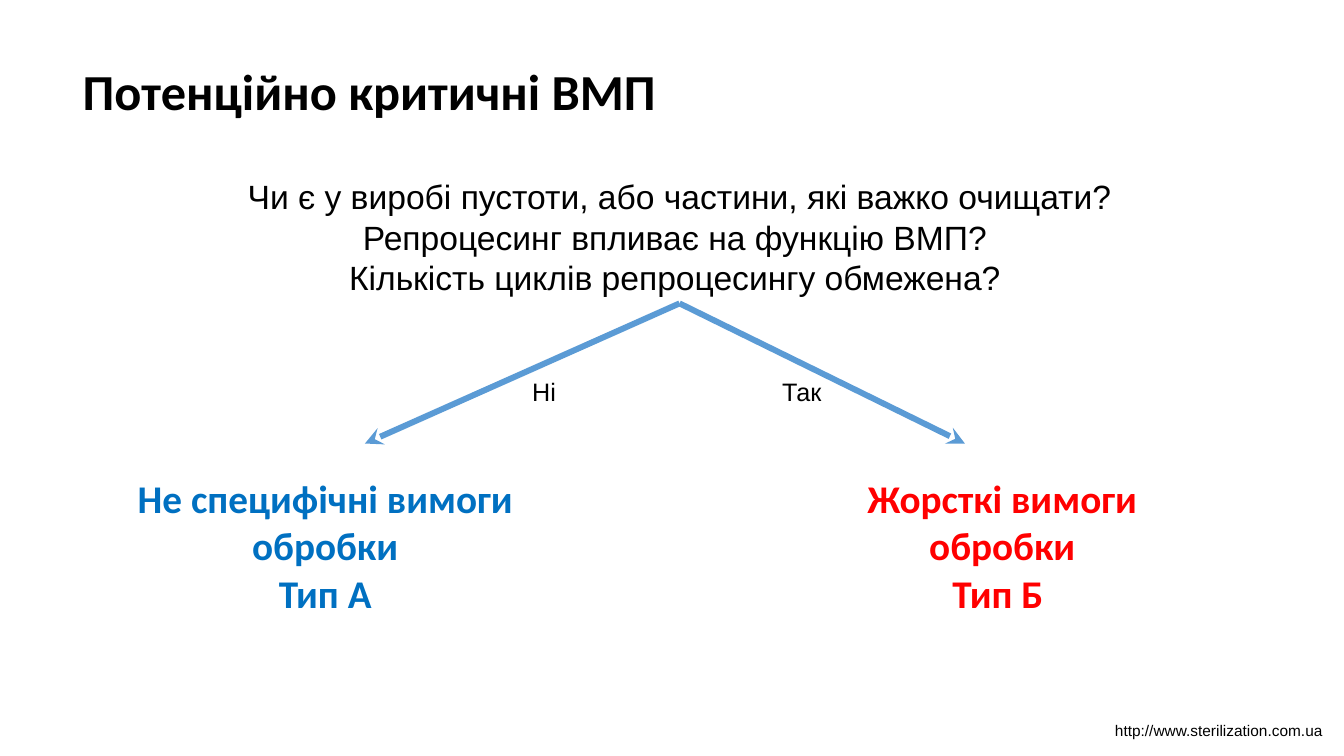
"""Builds the decision slide on potentially critical medical devices."""
from lxml.etree import SubElement
from pptx import Presentation
from pptx.dml.color import RGBColor
from pptx.enum.shapes import MSO_CONNECTOR
from pptx.enum.text import MSO_ANCHOR, PP_ALIGN
from pptx.oxml.ns import qn
from pptx.util import Inches, Pt

BLACK = RGBColor(0x00, 0x00, 0x00)
ARROW_BLUE = RGBColor(0x5B, 0x9B, 0xD5)
TYPE_A_BLUE = RGBColor(0x00, 0x70, 0xC1)
TYPE_B_RED = RGBColor(0xFF, 0x00, 0x00)


def write(frame, text, font_name, size, color, bold, align):
    frame.text = text
    for paragraph in frame.paragraphs:
        paragraph.alignment = align
        for run in paragraph.runs:
            run.font.name = font_name
            run.font.size = Pt(size)
            run.font.bold = bold
            run.font.color.rgb = color


presentation = Presentation()
presentation.slide_width = Inches(13.33)
presentation.slide_height = Inches(7.5)
slide = presentation.slides.add_slide(presentation.slide_layouts[5])

title = slide.shapes.title
title.left, title.top = Inches(0.72), Inches(0.18)
title.width, title.height = Inches(10.11), Inches(1.43)
write(title.text_frame, "Потенційно критичні ВМП", "Calibri", 36, BLACK, True, PP_ALIGN.LEFT)
title.text_frame.vertical_anchor = MSO_ANCHOR.MIDDLE

questions = (
    "Чи є у виробі пустоти, або частини, які важко очищати?\n"
    "Репроцесинг впливає на функцію ВМП? \n"
    "Кількість циклів репроцесингу обмежена? "
)
centred_blocks = [
    (1.73, 1.7, 10.02, 1.31, questions, "Arial", 24, BLACK, False),
    (1.03, 4.66, 4.39, 1.51, "Не специфічні вимоги обробки\nТип А", "Calibri", 28, TYPE_A_BLUE, True),
    (8.13, 4.66, 3.62, 1.51, "Жорсткі вимоги обробки\nТип Б ", "Calibri", 28, TYPE_B_RED, True),
]
for left, top, width, height, text, font_name, size, color, bold in centred_blocks:
    block = slide.shapes.add_textbox(Inches(left), Inches(top), Inches(width), Inches(height))
    block.text_frame.word_wrap = True
    write(block.text_frame, text, font_name, size, color, bold, PP_ALIGN.CENTER)

for target_x in (3.62, 9.57):
    branch = slide.shapes.add_connector(
        MSO_CONNECTOR.STRAIGHT, Inches(6.74), Inches(3.01), Inches(target_x), Inches(4.4)
    )
    branch.line.color.rgb = ARROW_BLUE
    branch.line.width = Pt(4.25)
    SubElement(branch.line._get_or_add_ln(), qn("a:tailEnd"), type="stealth")
    SubElement(branch._element.spPr, qn("a:effectLst"))

single_lines = [
    (5.18, 3.68, 0.44, 0.4, "Ні", 18),
    (7.66, 3.68, 0.6, 0.4, "Так", 18),
    (10.96, 7.1, 2.28, 0.29, "http://www.sterilization.com.ua", 11),
]
for left, top, width, height, text, size in single_lines:
    label = slide.shapes.add_textbox(Inches(left), Inches(top), Inches(width), Inches(height))
    label.text_frame.word_wrap = False
    write(label.text_frame, text, "Arial", size, BLACK, False, PP_ALIGN.LEFT)

presentation.save("out.pptx")
